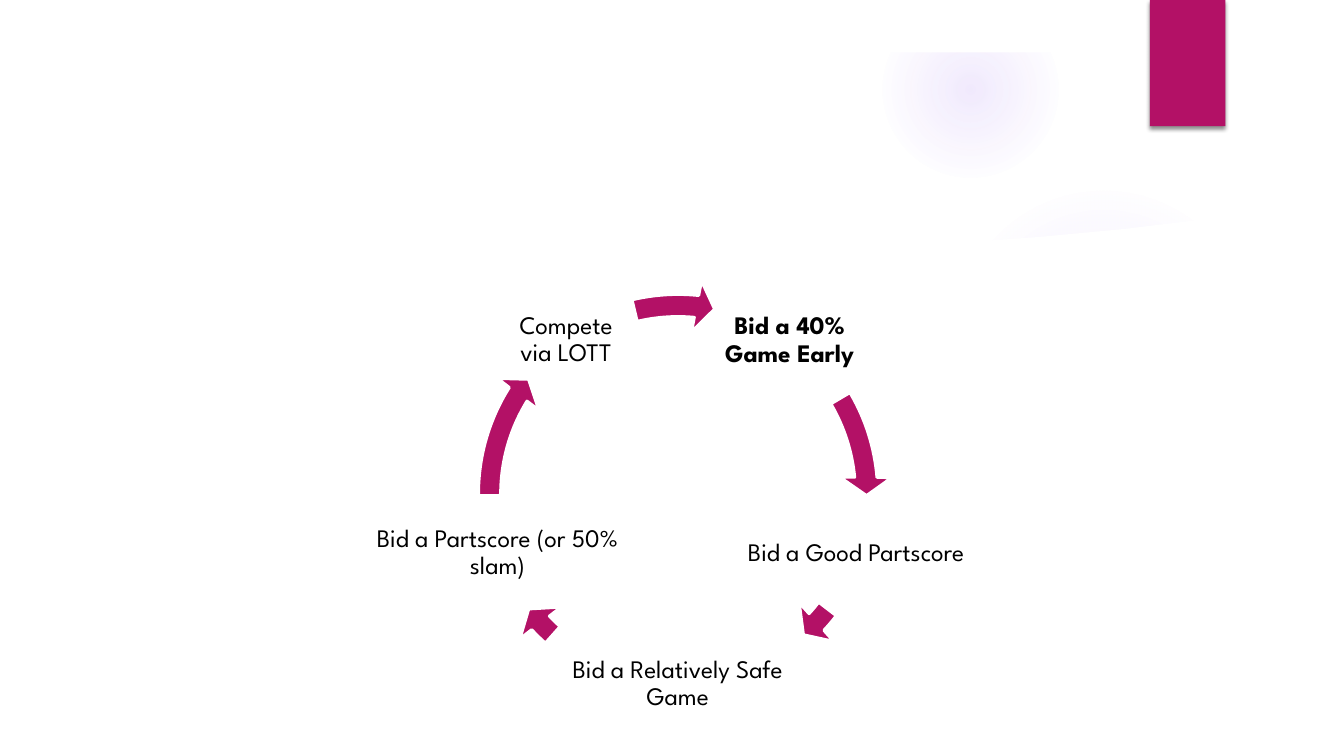
from lxml import etree
from pptx import Presentation
from pptx import util as u
from pptx.dml.color import RGBColor
from pptx.enum import shapes, text
from pptx.oxml import ns

MAGENTA = RGBColor(0xB3, 0x11, 0x66)
LILAC = RGBColor(0x9B, 0x6B, 0xF2)
WHITE = RGBColor(0xFF, 0xFF, 0xFF)
BLACK = RGBColor(0x00, 0x00, 0x00)
FONT = "League Spartan"
WIDTH, HEIGHT = u.Cm(33.87), u.Cm(19.05)

GLOWS = [
    (23.9, 4.65, 7.82, [(0, 7), (36, 6), (69, 0)]),
    (22.23, 0.03, 4.44, [(0, 14), (36, 7), (73, 0)]),
]
PANEL = [
    (1.27, 5.18), (1.27, 17.78), (32.61, 17.78), (32.61, 5.18), (30.48, 5.51),
    (28.35, 5.77), (26.21, 5.97), (24.1, 6.12), (22.02, 6.22), (19.3, 6.27),
    (16.69, 6.3), (13.59, 6.22), (10.19, 6.05), (6.32, 5.77), (3.43, 5.46),
]
FRAME_OUTER = [(0, 0), (0, 19.05), (33.87, 19.05), (33.87, 0)]
FRAME_INNER = [(32.54, 17.73), (1.32, 17.73), (1.32, 1.32), (32.54, 1.32)]
STEPS = [
    ("Bid a 40% Game Early", (18.01, 7.14, 3.78, 2.87), True, 329.43, 354.9),
    ("Bid a Good Partscore ", (18.72, 12.5, 5.87, 2.87), False, 37.55, 42.74),
    ("Bid a Relatively Safe Game", (13.89, 15.8, 6.38, 2.87), False, 131.66, 136.85),
    ("Bid a Partscore (or 50% slam)", (9.3, 12.5, 6.48, 2.87), False, 179.51, 211.93),
    ("Compete via LOTT", (12.55, 7.62, 3.43, 1.9), False, 256.64, 275.59),
]


def child(parent, tag, **attributes):
    element = etree.SubElement(parent, ns.qn(tag))
    for name, value in attributes.items():
        element.set(name, str(value))
    return element


def paint(part, color):
    part.shadow.inherit = False
    part.fill.solid()
    part.fill.fore_color.rgb = color
    part.line.fill.background()


def add_preset(slide, preset, box, color):
    part = slide.shapes.add_shape(preset, *(u.Cm(length) for length in box))
    paint(part, color)
    return part


def add_glow(slide, left, top, size, stops):
    glow = add_preset(slide, shapes.MSO_SHAPE.OVAL, (left, top, size, size), LILAC)
    properties = glow._element.spPr
    solid = properties.find(ns.qn("a:solidFill"))
    gradient = etree.Element(ns.qn("a:gradFill"), rotWithShape="1")
    stop_list = child(gradient, "a:gsLst")
    for position, opacity in stops:
        stop = child(stop_list, "a:gs", pos=position * 1000)
        tint = child(stop, "a:srgbClr", val=LILAC)
        child(tint, "a:alpha", val=opacity * 1000)
    circle = child(gradient, "a:path", path="circle")
    child(circle, "a:fillToRect", l=50000, t=50000, r=50000, b=50000)
    properties.replace(solid, gradient)


def add_outline(slide, *contours):
    contours = [[(u.Cm(x), u.Cm(y)) for x, y in contour] for contour in contours]
    builder = slide.shapes.build_freeform(*contours[0][0])
    for contour in contours:
        if contour is not contours[0]:
            builder.move_to(*contour[0])
        builder.add_line_segments(contour[1:], close=True)
    paint(builder.convert_to_shape(), WHITE)


def add_tab(slide):
    tab = add_preset(slide, shapes.MSO_SHAPE.RECTANGLE, (28.98, 0, 1.9, 3.18), MAGENTA)
    effects = tab._element.spPr.find(ns.qn("a:effectLst"))
    shadow = child(effects, "a:outerShdw", blurRad=u.Pt(3), dist=u.Pt(2),
                   dir=5400000, rotWithShape=0)
    child(child(shadow, "a:srgbClr", val=BLACK), "a:alpha", val=45000)


def add_label(slide, wording, box, bold):
    frame = slide.shapes.add_textbox(*(u.Cm(length) for length in box)).text_frame
    frame.word_wrap = True
    frame.vertical_anchor = text.MSO_ANCHOR.MIDDLE
    frame.margin_left = frame.margin_right = u.Cm(0.08)
    frame.margin_top = frame.margin_bottom = u.Cm(0.08)
    frame.text = wording
    paragraph = frame.paragraphs[0]
    paragraph.alignment = text.PP_ALIGN.CENTER
    paragraph.line_spacing = 0.9
    font = paragraph.runs[0].font
    font.name, font.size, font.bold = FONT, u.Pt(18), bold
    font.color.rgb = BLACK


def add_cycle_arrow(slide, start, end):
    arrow = add_preset(slide, shapes.MSO_SHAPE.CIRCULAR_ARROW,
                       (11.68, 7.04, 10.82, 10.82), MAGENTA)
    arrow.line.color.rgb = WHITE
    arrow.line.width = u.Pt(2.25)
    per_degree = 0.6
    settings = (0.052, 5.6 * per_degree, end * per_degree, start * per_degree, 0.061)
    for index, setting in enumerate(settings):
        arrow.adjustments[index] = setting


def main():
    deck = Presentation()
    deck.slide_width, deck.slide_height = WIDTH, HEIGHT
    slide = deck.slides.add_slide(deck.slide_layouts[6])
    slide.background.fill.solid()
    slide.background.fill.fore_color.rgb = WHITE
    for glow in GLOWS:
        add_glow(slide, *glow)
    add_outline(slide, PANEL)
    add_outline(slide, FRAME_OUTER, FRAME_INNER)
    add_tab(slide)
    for wording, box, bold, start, end in STEPS:
        add_label(slide, wording, box, bold)
        add_cycle_arrow(slide, start, end)
    deck.save("out.pptx")


if __name__ == "__main__":
    main()
